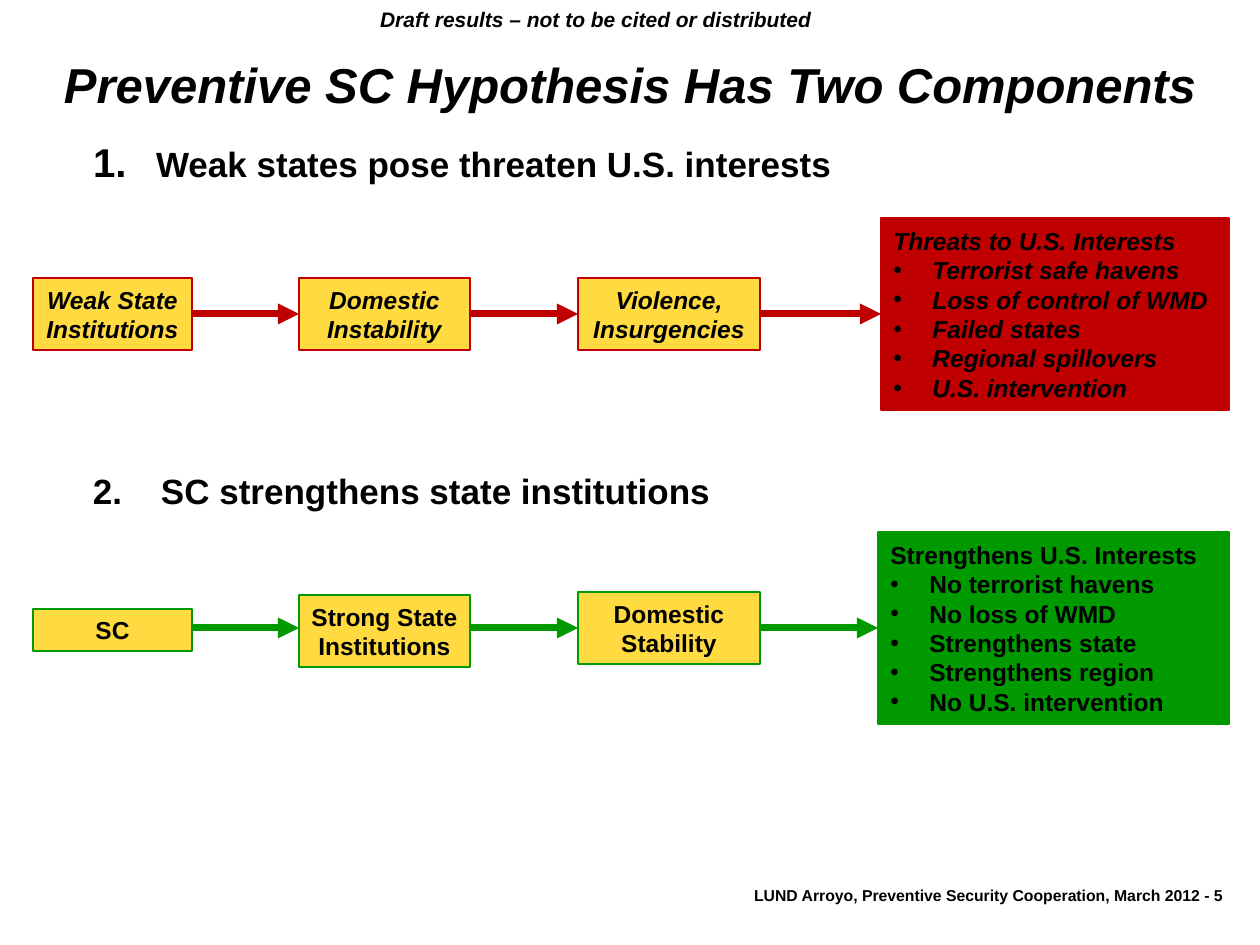
from lxml.etree import SubElement
from pptx import Presentation
from pptx.dml.color import RGBColor
from pptx.enum.shapes import MSO_CONNECTOR as CONN, MSO_SHAPE as SHAPE
from pptx.enum.text import MSO_ANCHOR as ANCHOR, MSO_AUTO_SIZE as FIT, PP_ALIGN as ALIGN
from pptx.oxml.ns import qn
from pptx.util import Pt

PX = 914400 / 126
BLACK = RGBColor(0x00, 0x00, 0x00)
YELLOW = RGBColor(0xFF, 0xDB, 0x41)
RED = RGBColor(0xC0, 0x00, 0x00)
GREEN = RGBColor(0x00, 0x99, 0x00)


def px(*values):
    return [round(v * PX) for v in values]


def write(sp, lines, size=14, italic=False, align=ALIGN.LEFT, anchor=ANCHOR.MIDDLE,
          wrap=True, fit=FIT.SHAPE_TO_FIT_TEXT, margin=None, spacing=None,
          bullet=None, hang=0):
    tf = sp.text_frame
    tf.word_wrap = wrap
    tf.auto_size = fit
    tf.vertical_anchor = anchor
    if margin is not None:
        tf.margin_left = tf.margin_right = tf.margin_top = tf.margin_bottom = margin
    for i, line in enumerate(lines):
        p = tf.add_paragraph() if i else tf.paragraphs[0]
        p.alignment = align
        p.space_before = Pt(0)
        if spacing:
            p.line_spacing = spacing
        pPr = p._p.get_or_add_pPr()
        if hang and (i or len(lines) == 1):
            pPr.set("marL", str(px(hang)[0]))
            pPr.set("indent", str(px(-hang)[0]))
            if bullet == "number":
                SubElement(pPr, qn("a:buSzPct"), val="115000")
                SubElement(pPr, qn("a:buAutoNum"), type="arabicPeriod")
            elif bullet:
                SubElement(pPr, qn("a:buFont"), typeface="Arial")
                SubElement(pPr, qn("a:buChar"), char=bullet)
        r = p.add_run()
        r.text = line
        r.font.name = "Arial"
        r.font.size = Pt(size)
        r.font.bold = True
        r.font.italic = italic
        r.font.color.rgb = BLACK


prs = Presentation()
prs.slide_width, prs.slide_height = px(1260, 945)
s = prs.slides.add_slide(prs.slide_layouts[1])

title, body = s.placeholders
title.left, title.top, title.width, title.height = px(0, 54, 1260, 84)
write(title, ["Preventive SC Hypothesis Has Two Components"], size=28, italic=True,
      align=ALIGN.CENTER, anchor=ANCHOR.TOP, fit=FIT.NONE, margin=0)
body.left, body.top, body.width, body.height = px(93, 142, 1071, 64)
write(body, ["Weak states pose threaten U.S. interests"], size=20, anchor=ANCHOR.TOP,
      fit=FIT.NONE, margin=0, bullet="number", hang=63)

second = s.shapes.add_textbox(*px(93, 470, 1071, 64))
write(second, ["2.\tSC strengthens state institutions"], size=20, anchor=ANCHOR.TOP,
      fit=FIT.NONE, margin=0, hang=68)
banner = s.shapes.add_textbox(*px(365, 0, 462, 38))
write(banner, ["Draft results – not to be cited or distributed"], size=12, italic=True,
      align=ALIGN.CENTER, anchor=ANCHOR.TOP, wrap=False)
footer = s.shapes.add_textbox(*px(723, 882, 512, 30))
write(footer, ["LUND Arroyo, Preventive Security Cooperation, March 2012 - 5"], size=9,
      align=ALIGN.RIGHT, anchor=ANCHOR.TOP, wrap=False, spacing=0.9)

CHAINS = [
    (RED, True, 314, [
        (33, 278, 159, 72, ["Weak State Institutions"]),
        (299, 278, 171, 72, ["Domestic Instability"]),
        (578, 278, 182, 72, ["Violence, Insurgencies"]),
        (881, 218, 348, 192, ["Threats to U.S. Interests", "Terrorist safe havens",
                              "Loss of control of WMD", "Failed states",
                              "Regional spillovers", "U.S. intervention"]),
    ]),
    (GREEN, False, 628, [
        (33, 609, 159, 42, ["SC"]),
        (299, 595, 171, 72, ["Strong State Institutions"]),
        (578, 592, 182, 72, ["Domestic Stability"]),
        (878, 532, 351, 192, ["Strengthens U.S. Interests", "No terrorist havens",
                              "No loss of WMD", "Strengthens state",
                              "Strengthens region", "No U.S. intervention"]),
    ]),
]

for color, italic, y, boxes in CHAINS:
    placed = []
    for left, top, width, height, lines in boxes:
        is_list = len(lines) > 1
        sp = s.shapes.add_shape(SHAPE.RECTANGLE, *px(left, top, width, height))
        sp.shadow.inherit = False
        sp.fill.solid()
        sp.fill.fore_color.rgb = color if is_list else YELLOW
        sp.line.color.rgb = color
        sp.line.width = Pt(1.5)
        write(sp, lines, italic=italic, align=ALIGN.LEFT if is_list else ALIGN.CENTER,
              bullet="•", hang=39 if is_list else 0)
        placed.append((sp, left, left + width, top + height / 2))

    for (a, _, x1, mid1), (b, x2, _, mid2) in zip(placed, placed[1:]):
        arrow = s.shapes.add_connector(CONN.STRAIGHT, *px(x1, y, x2, y))
        if mid1 == y:
            arrow.begin_connect(a, 3)
        if mid2 == y:
            arrow.end_connect(b, 1)
        arrow.line.color.rgb = color
        arrow.line.width = Pt(4)
        SubElement(arrow.line._get_or_add_ln(), qn("a:tailEnd"), type="triangle")
        SubElement(arrow._element.spPr, qn("a:effectLst"))

prs.save("out.pptx")
